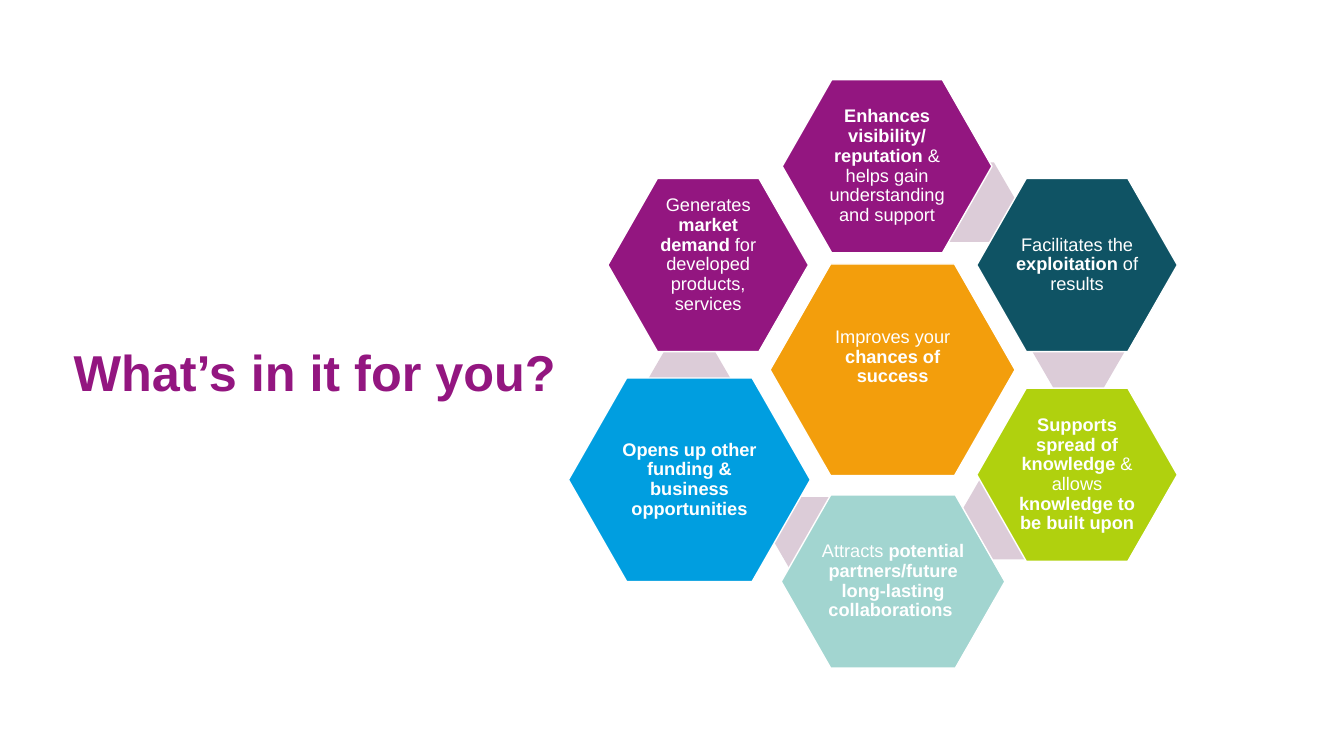
from dataclasses import dataclass
from typing import Optional

from pptx import Presentation
from pptx.dml.color import RGBColor
from pptx.enum.shapes import MSO_SHAPE
from pptx.enum.text import MSO_ANCHOR, MSO_AUTO_SIZE, PP_ALIGN
from pptx.util import Pt

HEXAGON = MSO_SHAPE.HEXAGON
MIDDLE, BOTTOM = MSO_ANCHOR.MIDDLE, MSO_ANCHOR.BOTTOM
LEFT, CENTER = PP_ALIGN.LEFT, PP_ALIGN.CENTER
NO_AUTOFIT = MSO_AUTO_SIZE.NONE

FONT = "Arial"
COLORS = {
    "purple": "931680",
    "orange": "F39E0C",
    "teal": "0F5364",
    "lime": "B0D10E",
    "mint": "A2D5D0",
    "blue": "009EE0",
    "link": "DCCCD8",
    "white": "FFFFFF",
}
LINK_SIZE = (66.2, 56.9)
OUTER_HEIGHT = 123.8
SIDE_WIDTH = 143.3
LEFT_X, RIGHT_X = 434.2, 697.7
UPPER_Y = 127.4
TEXT_INSET = 1.5


@dataclass
class Benefit:
    """A hexagon; its text holds bold parts between asterisks."""
    text: str
    color: str
    left: float
    top: float
    width: float
    height: float = OUTER_HEIGHT
    link: Optional[tuple[float, float]] = None
    lift: float = 0


BENEFITS = [
    Benefit("Improves your *chances of success*", "orange",
            550.1, 188.6, 175, 151.2, lift=18),
    Benefit("*Enhances visibility/ reputation *& helps gain understanding and support",
            "purple", 558.7, 56.9, 149.8, link=(660.2, 115.9)),
    Benefit("Facilitates the *exploitation* of results", "teal",
            RIGHT_X, UPPER_Y, SIDE_WIDTH, link=(737.3, 222.5)),
    Benefit("*Supports spread of knowledge *& allows *knowledge to be built upon*",
            "lime", RIGHT_X, 277.2, SIDE_WIDTH, link=(683.3, 342.7)),
    Benefit("Attracts *potential partners/future long-lasting collaborations *",
            "mint", 558, 353.5, 159.8, link=(550.8, 355)),
    Benefit("*Opens up other funding & business opportunities*", "blue",
            406.1, 270, 172.8, 145.4, link=(459.4, 248.4)),
    Benefit("Generates *market demand *for developed products, services", "purple",
            LEFT_X, UPPER_Y, SIDE_WIDTH, lift=14),
]


def rgb(name: str) -> RGBColor:
    return RGBColor.from_string(COLORS[name])


def set_insets(frame, left: float, top: float, right: float, bottom: float) -> None:
    frame.margin_left, frame.margin_top = Pt(left), Pt(top)
    frame.margin_right, frame.margin_bottom = Pt(right), Pt(bottom)


def style_paragraph(para, size: float, color: str, align) -> None:
    para.alignment = align
    para.line_spacing = 0.9
    para.font.name = FONT
    para.font.size = Pt(size)
    para.font.color.rgb = rgb(color)


def add_hexagon(page, left: float, top: float, width: float, height: float,
                color: str, adjustment: float):
    hexagon = page.shapes.add_shape(HEXAGON, Pt(left), Pt(top), Pt(width), Pt(height))
    hexagon.adjustments[0] = adjustment
    hexagon.shadow.inherit = False
    hexagon.fill.solid()
    hexagon.fill.fore_color.rgb = rgb(color)
    return hexagon


def add_benefit(page, benefit: Benefit) -> None:
    if benefit.link:
        link = add_hexagon(page, *benefit.link, *LINK_SIZE, "link", 0.289)
        link.line.fill.background()
    hexagon = add_hexagon(page, benefit.left, benefit.top, benefit.width,
                          benefit.height, benefit.color, 0.286)
    hexagon.line.color.rgb = rgb("white")
    hexagon.line.width = Pt(1)

    frame = hexagon.text_frame
    frame.word_wrap = True
    frame.vertical_anchor = MIDDLE
    set_insets(frame, TEXT_INSET, TEXT_INSET, TEXT_INSET, TEXT_INSET + benefit.lift)
    para = frame.paragraphs[0]
    style_paragraph(para, 13, "white", CENTER)
    for index, part in enumerate(benefit.text.split("*")):
        if part:
            span = para.add_run()
            span.text = part
            span.font.bold = index % 2 == 1


def add_title(page, text: str) -> None:
    title = page.shapes.title
    title.left, title.top = Pt(45.4), Pt(249.8)
    title.width, title.height = Pt(365), Pt(37.4)
    frame = title.text_frame
    frame.text = text
    frame.word_wrap = True
    frame.auto_size = NO_AUTOFIT
    frame.vertical_anchor = BOTTOM
    set_insets(frame, 7.2, 3.6, 7.2, 0)
    para = frame.paragraphs[0]
    style_paragraph(para, 36, "purple", LEFT)
    para.font.bold = True


def main() -> None:
    deck = Presentation()
    deck.slide_width, deck.slide_height = Pt(960), Pt(540)
    page = deck.slides.add_slide(deck.slide_layouts.get_by_name("Title Only"))
    add_title(page, "What’s in it for you?")
    for benefit in BENEFITS:
        add_benefit(page, benefit)
    deck.save("out.pptx")


if __name__ == "__main__":
    main()
